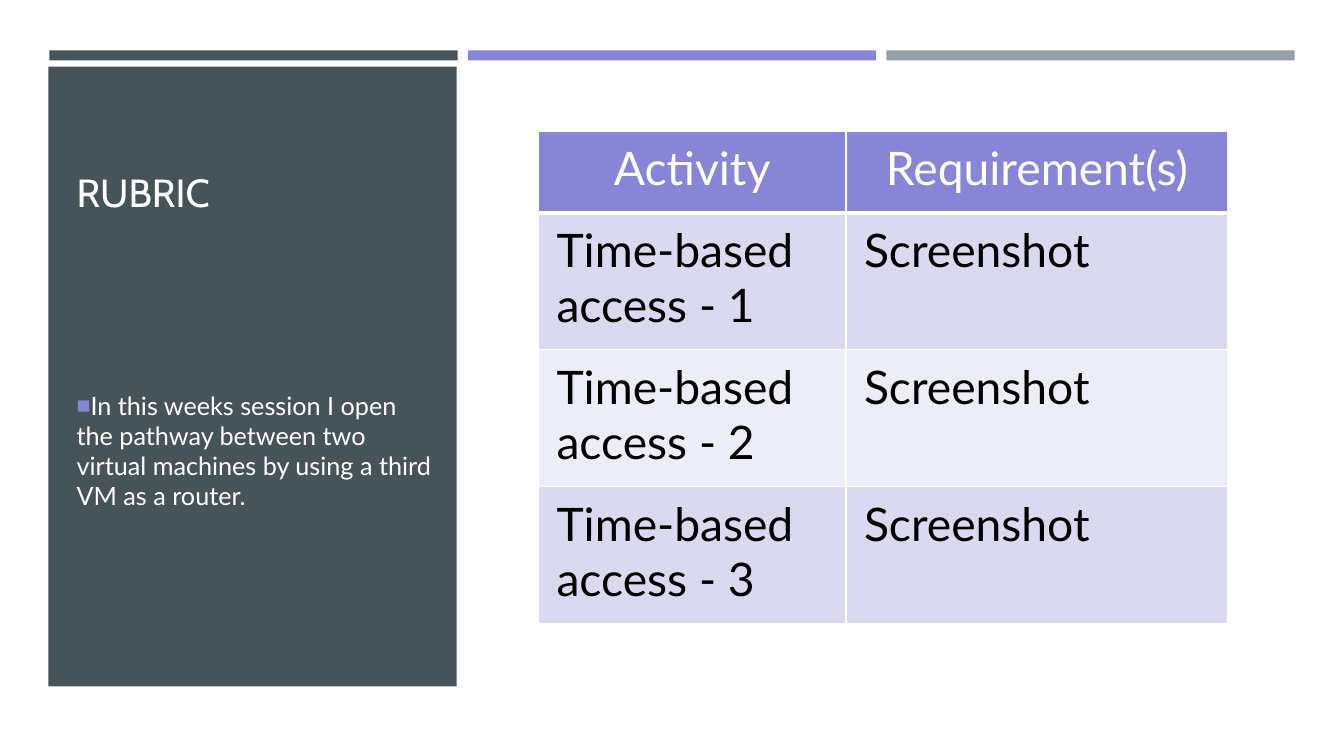
from pptx import Presentation
from pptx.dml.color import RGBColor
from pptx.enum.shapes import MSO_SHAPE
from pptx.enum.text import MSO_ANCHOR, MSO_AUTO_SIZE, PP_ALIGN
from pptx.oxml.ns import qn
from pptx.util import Inches, Pt
from lxml import etree

RECTANGLE = MSO_SHAPE.RECTANGLE
TOP, MIDDLE, BOTTOM = MSO_ANCHOR.TOP, MSO_ANCHOR.MIDDLE, MSO_ANCHOR.BOTTOM
LEFT, CENTER = PP_ALIGN.LEFT, PP_ALIGN.CENTER

SLIDE_SIZE = (13.33, 7.5)
WHITE, BLACK, SLATE, PURPLE, GRAY = "FFFFFF", "000000", "465359", "8885D7", "969FA7"
ROW_BANDS = ["DAD9F0", "EDEDF8"]

TITLE = "RUBRIC"
SUMMARY = ("In this weeks session I open the pathway between two virtual machines "
           "by using a third VM as a router.")
RUBRIC = [
    ("Activity", "Requirement(s)"),
    ("Time-based access - 1", "Screenshot"),
    ("Time-based access - 2", "Screenshot"),
    ("Time-based access - 3", "Screenshot"),
]
COLUMN_WIDTHS = [3.05, 3.79]
HEADER_HEIGHT, ROW_HEIGHT = 0.81, 1.36
TABLE_LEFT, TABLE_TOP = 5.34, 1.3

BAR_COLORS = [SLATE, PURPLE, GRAY]
BAR_LEFT, BAR_TOP, BAR_WIDTH, BAR_HEIGHT, BAR_STEP = 0.49, 0.5, 4.05, 0.1, 4.15
PANEL = (0.48, 0.66, 4.05, 6.15)
TITLE_BOX = (0.66, 0.77, 3.73, 1.42)
SUMMARY_BOX = (0.66, 2.38, 3.73, 4.18)


def rgb(color):
    return RGBColor.from_string(color)


def add_backdrop(slide, box, color):
    """Add a plain rectangle behind the placeholders."""
    shape = slide.shapes.add_shape(RECTANGLE, *map(Inches, box))
    shape.shadow.inherit = False
    shape.fill.solid()
    shape.fill.fore_color.rgb = rgb(color)
    shape.line.fill.background()
    slide.shapes.title._element.addprevious(shape._element)


def write(text_frame, text, *, size, color, font="Lato", align=LEFT):
    text_frame.text = text
    text_frame.word_wrap = True
    paragraph = text_frame.paragraphs[0]
    paragraph.alignment = align
    run_font = paragraph.runs[0].font
    run_font.name, run_font.size, run_font.bold = font, Pt(size), False
    run_font.color.rgb = rgb(color)
    return paragraph


def place(placeholder, box, anchor):
    placeholder.left, placeholder.top, placeholder.width, placeholder.height = map(Inches, box)
    placeholder.text_frame.auto_size = MSO_AUTO_SIZE.NONE
    placeholder.text_frame.vertical_anchor = anchor


def add_square_bullet(paragraph, color):
    properties = paragraph._p.get_or_add_pPr()
    properties.set("marL", "0")
    properties.set("indent", "0")
    bullet_color = etree.SubElement(properties, qn("a:buClr"))
    etree.SubElement(bullet_color, qn("a:srgbClr"), val=color)
    etree.SubElement(properties, qn("a:buSzPct"), val="92000")
    etree.SubElement(properties, qn("a:buChar"), char="■")


def add_border(cell, side, width, color):
    line = etree.SubElement(cell._tc.get_or_add_tcPr(), qn(f"a:ln{side}"), w=str(Pt(width)))
    fill = etree.SubElement(line, qn("a:solidFill"))
    etree.SubElement(fill, qn("a:srgbClr"), val=color)


def style_cell(cell, fill, bottom_width):
    cell.margin_left = cell.margin_right = Inches(0.18)
    cell.margin_top = cell.margin_bottom = Inches(0.09)
    cell.vertical_anchor = TOP
    for side, width in (("L", 1), ("R", 1), ("T", 1), ("B", bottom_width)):
        add_border(cell, side, width, WHITE)
    cell.fill.solid()
    cell.fill.fore_color.rgb = rgb(fill)


def add_rubric_table(slide):
    heights = [HEADER_HEIGHT] + [ROW_HEIGHT] * (len(RUBRIC) - 1)
    box = (TABLE_LEFT, TABLE_TOP, sum(COLUMN_WIDTHS), sum(heights))
    table = slide.shapes.add_table(len(RUBRIC), len(COLUMN_WIDTHS), *map(Inches, box)).table
    for column, width in zip(table.columns, COLUMN_WIDTHS):
        column.width = Inches(width)
    for row_index, (row, height) in enumerate(zip(table.rows, heights)):
        row.height = Inches(height)
        header = row_index == 0
        fill = PURPLE if header else ROW_BANDS[(row_index - 1) % 2]
        for cell, text in zip(row.cells, RUBRIC[row_index]):
            style_cell(cell, fill, bottom_width=3 if header else 1)
            write(cell.text_frame, text, size=33, color=WHITE if header else BLACK,
                  align=CENTER if header else LEFT)


def main():
    presentation = Presentation()
    presentation.slide_width, presentation.slide_height = map(Inches, SLIDE_SIZE)
    slide = presentation.slides.add_slide(presentation.slide_layouts[1])

    add_backdrop(slide, (0, 0, *SLIDE_SIZE), WHITE)
    for index, color in enumerate(BAR_COLORS):
        add_backdrop(slide, (BAR_LEFT + index * BAR_STEP, BAR_TOP, BAR_WIDTH, BAR_HEIGHT), color)
    add_backdrop(slide, PANEL, SLATE)

    title, summary = slide.shapes.title, slide.placeholders[1]
    place(title, TITLE_BOX, BOTTOM)
    write(title.text_frame, TITLE, size=28, color=WHITE, font="Cabin")

    place(summary, SUMMARY_BOX, MIDDLE)
    paragraph = write(summary.text_frame, SUMMARY, size=18, color=WHITE)
    paragraph.space_after = Pt(6)
    add_square_bullet(paragraph, PURPLE)

    add_rubric_table(slide)
    presentation.save("out.pptx")


if __name__ == "__main__":
    main()
